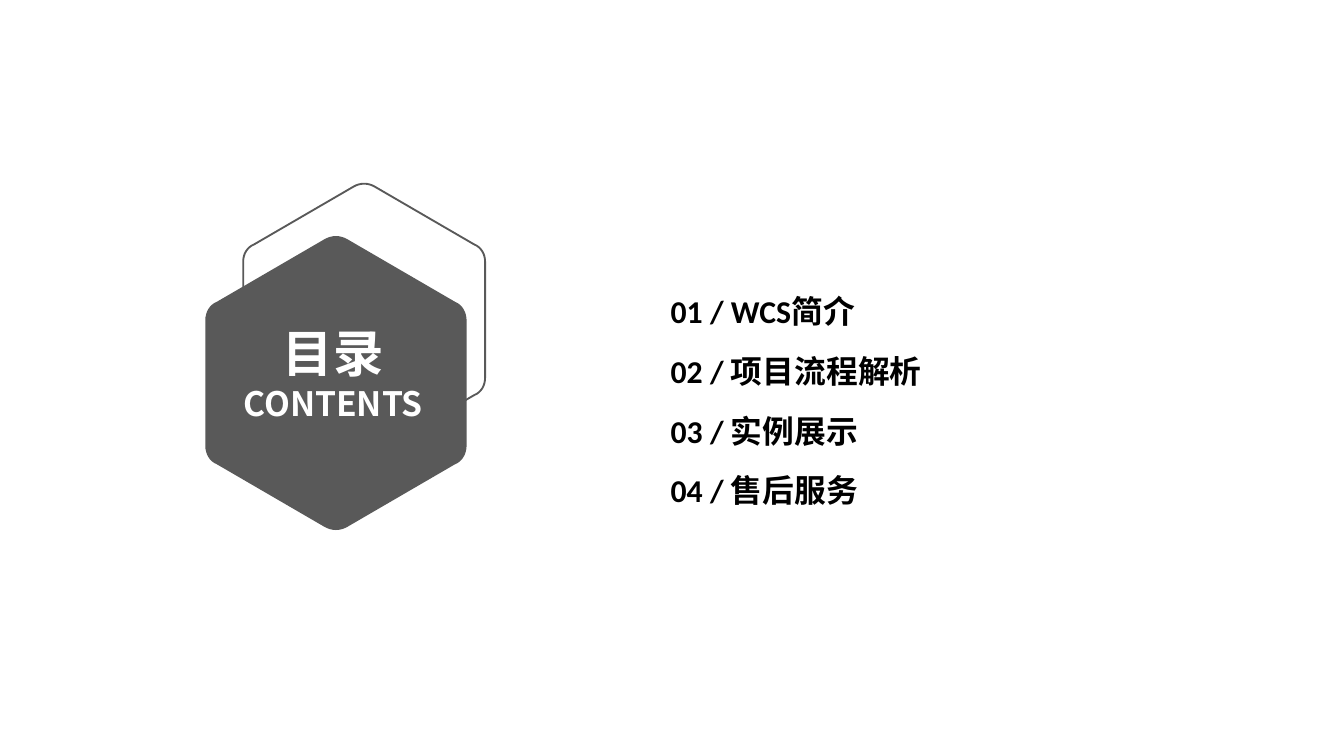
import pptx
import pptx.util
import pptx.dml.color
import pptx.enum.text
import pptx.oxml
import pptx.oxml.ns

Inches, Pt = pptx.util.Inches, pptx.util.Pt
COLORS = {"gray": "595959", "black": "000000", "white": "FFFFFF"}
CJK_FONT = "Noto Sans CJK SC"
TOP = [(-0.08, -0.99), (-0.03, -1.02), (0.03, -1.02), (0.08, -0.99)]
SIDE = [(0.82, -0.56), (0.87, -0.54), (0.9, -0.49), (0.9, -0.43)]
STEPS = 8


def add_hexagon(s, cx, cy, scale):
    corners = [
        TOP,
        SIDE,
        [(x, -y) for x, y in reversed(SIDE)],
        [(-x, -y) for x, y in TOP],
        [(-x, -y) for x, y in SIDE],
        [(-x, y) for x, y in reversed(SIDE)],
    ]
    points = []
    for curve in corners:
        for i in range(STEPS + 1):
            t = i / STEPS
            weights = ((1 - t) ** 3, 3 * t * (1 - t) ** 2, 3 * t * t * (1 - t), t ** 3)
            x = sum(w * pt[0] for w, pt in zip(weights, curve))
            y = sum(w * pt[1] for w, pt in zip(weights, curve))
            points.append((Inches(cx + scale * x), Inches(cy + scale * y)))
    builder = s.shapes.build_freeform(*points[0])
    builder.add_line_segments(points[1:], close=True)
    sp = builder.convert_to_shape()
    sp.shadow.inherit = False
    return sp


def fill_text(sp, box, lines, font, color, align, spacing):
    sp.left, sp.top, sp.width, sp.height = [Inches(v) for v in box]
    tf = sp.text_frame
    tf.word_wrap = True
    tf.auto_size = pptx.enum.text.MSO_AUTO_SIZE.NONE
    tf.vertical_anchor = pptx.enum.text.MSO_ANCHOR.TOP
    tf.margin_left = tf.margin_right = Inches(0.07)
    tf.margin_top = tf.margin_bottom = Inches(0.04)
    tf.text = "\n".join(text for text, size in lines)
    for p, (text, size) in zip(tf.paragraphs, lines):
        p.alignment = align
        p.line_spacing = spacing
        p.space_before = Pt(0)
        p.font.name, p.font.size, p.font.bold = font, Pt(size), True
        p.font.color.rgb = pptx.dml.color.RGBColor.from_string(COLORS[color])
        pPr = p._p.get_or_add_pPr()
        pPr.set("marL", "0")
        pPr.set("indent", "0")
        defaults = pPr.find(pptx.oxml.ns.qn("a:defRPr"))
        defaults.addprevious(pptx.oxml.parse_xml(f"<a:buNone {pptx.oxml.ns.nsdecls('a')}/>"))
        latin = defaults.find(pptx.oxml.ns.qn("a:latin"))
        latin.addnext(pptx.oxml.parse_xml(
            f'<a:ea {pptx.oxml.ns.nsdecls("a")} typeface="{CJK_FONT}"/>'))


prs = pptx.Presentation()
prs.slide_width = Inches(10)
prs.slide_height = Inches(10 * 9 / 16)
s = prs.slides.add_slide(prs.slide_layouts[1])
gray = pptx.dml.color.RGBColor.from_string(COLORS["gray"])

outline = add_hexagon(s, 2.71, 2.38, 1)
outline.fill.background()
outline.line.color.rgb = gray
outline.line.width = Pt(1)

badge = add_hexagon(s, 2.5, 2.85, 1.08)
badge.fill.solid()
badge.fill.fore_color.rgb = gray
badge.line.fill.background()

topics = ["01 / WCS简介", "02 / 项目流程解析", "03 / 实例展示", "04 / 售后服务"]
fill_text(s.placeholders[1], (4.92, 1.97, 3.26, 1.86), [(text, 17) for text in topics],
          "Calibri", "black", pptx.enum.text.PP_ALIGN.LEFT, Pt(32))

title = s.shapes.title
fill_text(title, (1.57, 2.36, 1.82, 0.83), [("目录", 27), ("CONTENTS", 18)],
          CJK_FONT, "white", pptx.enum.text.PP_ALIGN.CENTER, 1.0)
badge._element.addnext(title._element)

prs.save("out.pptx")
